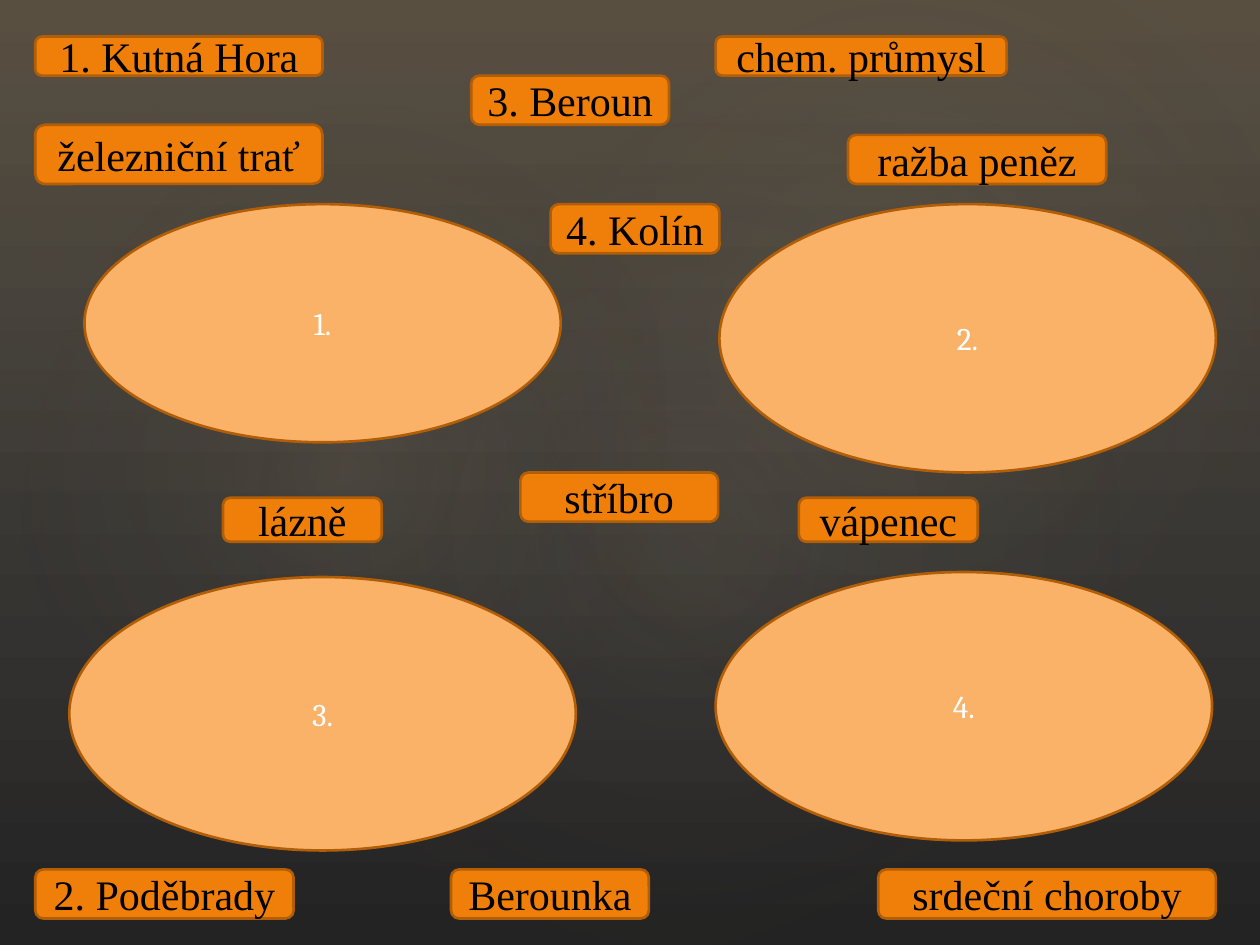
"""Build a matching exercise on four towns, with labels scattered around four ovals."""
from dataclasses import dataclass

from lxml.etree import SubElement
from pptx import Presentation
from pptx.dml.color import RGBColor
from pptx.dml.fill import FillFormat
from pptx.enum.shapes import MSO_SHAPE as Preset
from pptx.enum.text import MSO_ANCHOR as Anchor, PP_ALIGN as Align
from pptx.oxml.ns import qn
from pptx.shapes.autoshape import Shape
from pptx.slide import Slide
from pptx.util import Inches, Length, Pt

WIDTH, HEIGHT = Inches(10), Inches(7.5)
COLUMNS, ROWS = 100, 75


@dataclass(frozen=True)
class Area:
    """Place and size in columns and rows of the slide grid."""
    column: float
    row: float
    columns: float
    rows: float


@dataclass(frozen=True)
class Look:
    """Shared appearance of one family of text shapes."""
    preset: Preset
    fill: str
    font: str
    size: int
    ink: str


@dataclass(frozen=True)
class Glow:
    """Soft round light on the background."""
    area: Area
    rotation: float
    opacity: int


OVAL = Look(Preset.OVAL, "F9B268", "Cambria", 18, "FFFFFF")
LABEL = Look(Preset.ROUNDED_RECTANGLE, "F07F09", "Times New Roman", 24, "000000")
BORDER = "B25E07"

GLOWS = [
    Glow(Area(15, 11.4, 79.2, 62.4), 328.7, 7),
    Glow(Area(-3, 12.8, 60.6, 49), 294.3, 8),
    Glow(Area(35.8, 1.3, 70.9, 52), 328.7, 8),
]
OVALS = {
    "1.": Area(6.7, 16.2, 37.8, 18.9),
    "2.": Area(57.1, 16.2, 39.4, 21.3),
    "3.": Area(5.5, 45.8, 40.2, 21.7),
    "4.": Area(56.8, 45.4, 39.4, 21.3),
}
LABELS = {
    "1. Kutná Hora": Area(2.8, 2.9, 22.8, 3.1),
    "stříbro": Area(41.3, 37.5, 15.7, 3.9),
    "ražba peněz": Area(67.3, 10.7, 20.5, 3.9),
    "2. Poděbrady": Area(2.8, 69, 20.5, 3.9),
    "lázně": Area(17.7, 39.5, 12.6, 3.5),
    "srdeční choroby": Area(69.7, 69, 26.8, 3.9),
    "3. Beroun": Area(37.4, 6, 15.7, 3.9),
    "Berounka": Area(35.8, 69, 15.7, 3.9),
    "vápenec": Area(63.4, 39.5, 14.2, 3.5),
    "chem. průmysl": Area(56.8, 2.9, 23.1, 3.1),
    "4. Kolín": Area(43.7, 16.2, 13.4, 3.9),
    "železniční trať": Area(2.8, 9.9, 22.8, 4.7),
}


def color(value: str) -> RGBColor:
    """Turn a hex string into a colour."""
    return RGBColor.from_string(value)


def across(columns: float) -> Length:
    """Convert grid columns to a length."""
    return Length(round(WIDTH * columns / COLUMNS))


def down(rows: float) -> Length:
    """Convert grid rows to a length."""
    return Length(round(HEIGHT * rows / ROWS))


def add_preset(slide: Slide, preset: Preset, area: Area) -> Shape:
    """Add a shadowless preset shape on the grid."""
    shape = slide.shapes.add_shape(
        preset, across(area.column), down(area.row), across(area.columns), down(area.rows))
    shape.shadow.inherit = False
    return shape


def fill_gradient(fill: FillFormat, colors: tuple[str, str], end: float = 1) -> None:
    """Apply a two-stop gradient that runs from top to bottom."""
    fill.gradient()
    fill.gradient_angle = 270
    for stop, value, position in zip(fill.gradient_stops, colors, (0, end)):
        stop.color.rgb = color(value)
        stop.position = position


def add_veil(slide: Slide, preset: Preset, area: Area, colors: tuple[str, str],
             opacities: tuple[int, int], end: float = 1) -> Shape:
    """Add a borderless, translucent gradient shape."""
    veil = add_preset(slide, preset, area)
    veil.line.fill.background()
    fill_gradient(veil.fill, colors, end)
    for tint, opacity in zip(veil.element.spPr.iter(qn("a:srgbClr")), opacities):
        SubElement(tint, qn("a:alpha"), val=str(opacity * 1000))
    return veil


def add_glow(slide: Slide, glow: Glow) -> None:
    """Add a light that fades from its centre outwards."""
    veil = add_veil(slide, Preset.OVAL, glow.area, ("DAC19B", "323232"), (glow.opacity, 0), 0.58)
    veil.rotation = glow.rotation
    gradient = veil.element.spPr.find(qn("a:gradFill"))
    gradient.remove(gradient.find(qn("a:lin")))
    circle = SubElement(gradient, qn("a:path"), path="circle")
    SubElement(circle, qn("a:fillToRect"), {side: "50000" for side in "ltrb"})


def add_text_shape(slide: Slide, text: str, area: Area, look: Look) -> None:
    """Add an outlined shape with one centred line of text."""
    box = add_preset(slide, look.preset, area)
    box.fill.solid()
    box.fill.fore_color.rgb = color(look.fill)
    box.line.color.rgb = color(BORDER)
    box.line.width = Pt(1.5)
    box.text_frame.vertical_anchor = Anchor.MIDDLE
    para = box.text_frame.paragraphs[0]
    para.alignment = Align.CENTER
    span = para.add_run()
    span.text = text
    span.font.name = look.font
    span.font.size = Pt(look.size)
    span.font.color.rgb = color(look.ink)


def main() -> None:
    """Build and save the deck."""
    deck = Presentation()
    deck.slide_width, deck.slide_height = WIDTH, HEIGHT
    page = deck.slides.add_slide(deck.slide_layouts[6])
    fill_gradient(page.background.fill, ("515151", "222222"))
    add_veil(page, Preset.RECTANGLE, Area(0, 0, COLUMNS, ROWS), ("674D26", "323232"), (36, 10))
    for glow in GLOWS:
        add_glow(page, glow)
    for family, look in ((OVALS, OVAL), (LABELS, LABEL)):
        for text, area in family.items():
            add_text_shape(page, text, area, look)
    deck.save("out.pptx")


if __name__ == "__main__":
    main()
